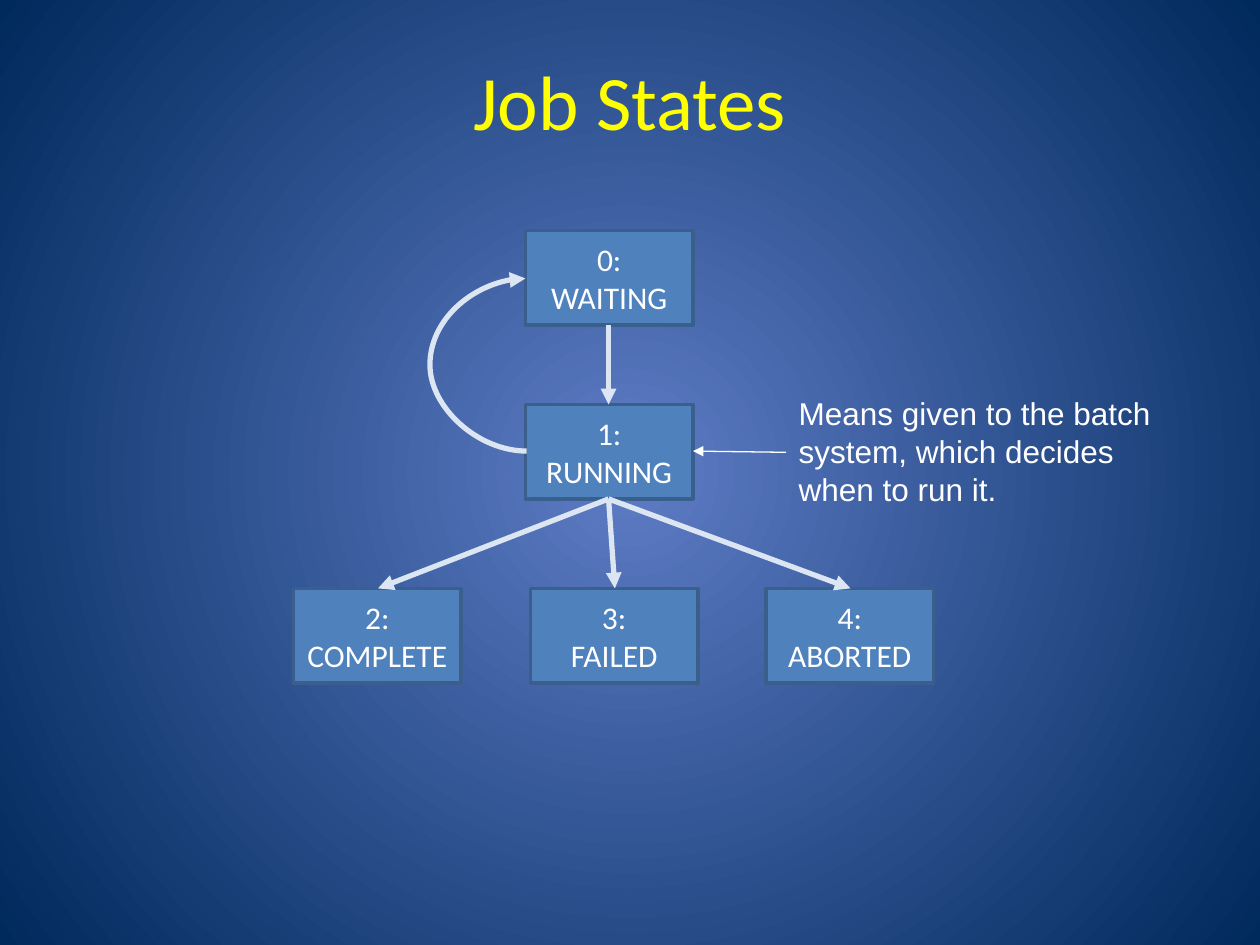
from pptx import Presentation
from pptx.dml.color import RGBColor
from pptx.enum.shapes import MSO_CONNECTOR, MSO_SHAPE
from pptx.enum.text import MSO_ANCHOR, PP_ALIGN
from pptx.oxml import parse_xml
from pptx.oxml.ns import nsdecls, qn
from pptx.util import Inches, Pt

RECT = MSO_SHAPE.RECTANGLE
STRAIGHT, CURVE = MSO_CONNECTOR.STRAIGHT, MSO_CONNECTOR.CURVE
MIDDLE, TOP = MSO_ANCHOR.MIDDLE, MSO_ANCHOR.TOP
CENTER, LEFT = PP_ALIGN.CENTER, PP_ALIGN.LEFT

GLOW = RGBColor(0x5E, 0x7C, 0xC5)
NAVY = RGBColor(0x00, 0x29, 0x5C)
YELLOW = RGBColor(0xFF, 0xFF, 0x00)
WHITE = RGBColor(0xFF, 0xFF, 0xFF)
BLUE = RGBColor(0x4F, 0x81, 0xBD)
BORDER = RGBColor(0x3A, 0x5F, 0x8C)
PALE = RGBColor(0xDC, 0xE6, 0xF2)

BOX_W, BOX_H = 1.33, 0.75


def write(shape, text, size=18, font="Calibri", color=WHITE, align=CENTER, anchor=MIDDLE):
    tf = shape.text_frame
    tf.word_wrap = True
    tf.vertical_anchor = anchor
    tf.text = text
    for p in tf.paragraphs:
        p.alignment = align
        for r in p.runs:
            r.font.size = Pt(size)
            r.font.name = font
            r.font.color.rgb = color


def arrow(x1, y1, x2, y2, color=PALE, width=3, kind=STRAIGHT, head="tailEnd"):
    line = s.shapes.add_connector(kind, Inches(x1), Inches(y1), Inches(x2), Inches(y2))
    line.line.color.rgb = color
    line.line.width = Pt(width)
    line.line._get_or_add_ln().append(parse_xml(f'<a:{head} {nsdecls("a")} type="triangle"/>'))
    line._element.spPr.append(parse_xml(f'<a:effectLst {nsdecls("a")}/>'))
    return line


prs = Presentation()
prs.slide_width, prs.slide_height = Inches(10), Inches(7.5)
s = prs.slides.add_slide(prs.slide_layouts[5])

# Background: glow from the centre
fill = s.background.fill
fill.gradient()
for stop, color, position in zip(fill.gradient_stops, (GLOW, NAVY), (0, 1)):
    stop.color.rgb = color
    stop.position = position
grad = s.element.find(".//" + qn("a:gradFill"))
grad.remove(grad.find(qn("a:lin")))
grad.append(parse_xml(
    f'<a:path {nsdecls("a")} path="circle">'
    '<a:fillToRect l="50000" t="50000" r="50000" b="50000"/></a:path>'))

# Title
title = s.shapes.title
title.left, title.top = Inches(0.5), Inches(0.17)
title.width, title.height = Inches(9), Inches(1.25)
write(title, "Job States", size=44, color=YELLOW)

# State boxes
states = [
    ("0: WAITING", 4.17, 1.83),
    ("1: RUNNING", 4.17, 3.21),
    ("2: COMPLETE", 2.33, 4.67),
    ("3:\nFAILED", 4.21, 4.67),
    ("4:\nABORTED", 6.08, 4.67),
]
for text, x, y in states:
    sp = s.shapes.add_shape(RECT, Inches(x), Inches(y), Inches(BOX_W), Inches(BOX_H))
    sp.shadow.inherit = False
    sp.fill.solid()
    sp.fill.fore_color.rgb = BLUE
    sp.line.color.rgb = BORDER
    sp.line.width = Pt(2)
    write(sp, text)

# Transitions: waiting to running, then to each end state
arrow(4.83, 2.58, 4.83, 3.21)
for x in (3, 4.88, 6.75):
    arrow(4.83, 3.96, x, 4.67)

# Return from running to waiting: half-turned so that it bulges left
back = arrow(4.17, 2.21, 4.18, 3.58, kind=CURVE)
back._element.spPr.find(qn("a:xfrm")).set("rot", "10800000")
guides = back._element.spPr.find(qn("a:prstGeom")).get_or_add_avLst()
guides.append(parse_xml(f'<a:gd {nsdecls("a")} name="adj1" fmla="val 7800000"/>'))

# Note on the running state
note = s.shapes.add_textbox(Inches(6.24), Inches(3.08), Inches(3.01), Inches(1.01))
write(note, "Means given to the batch system, which decides when to run it.",
      font="Arial", align=LEFT, anchor=TOP)
arrow(6.24, 3.59, 5.5, 3.58, color=WHITE, width=0.75)

prs.save("out.pptx")
